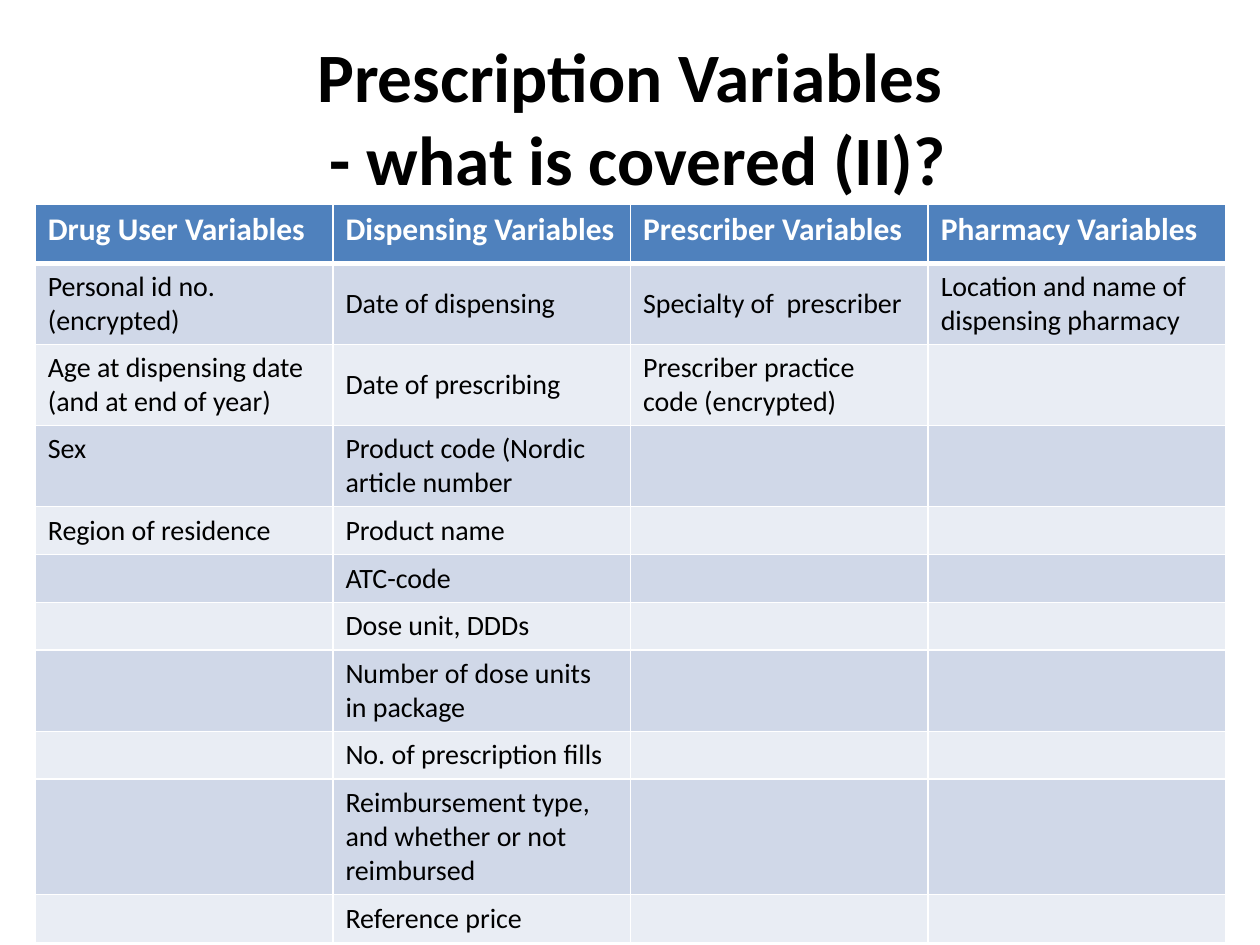
"""Build a slide with a table of prescription variables."""
from lxml.etree import SubElement
from pptx import Presentation
from pptx.dml.color import RGBColor
from pptx.enum.text import MSO_ANCHOR as Anchor, PP_ALIGN as Align
from pptx.oxml.ns import qn
from pptx.util import Inches, Pt

WHITE = RGBColor(0xFF, 0xFF, 0xFF)
BLACK = RGBColor(0, 0, 0)
BLUE = RGBColor(0x4F, 0x81, 0xBD)
BANDS = RGBColor(0xE9, 0xED, 0xF4), RGBColor(0xD0, 0xD8, 0xE8)
FONT = "Calibri"

TITLE = "Prescription Variables\v - what is covered (II)?"
HEADS = ["Drug User Variables", "Dispensing Variables",
         "Prescriber Variables", "Pharmacy Variables"]
USER = ["Personal id no. (encrypted)",
        "Age at dispensing date\n(and at end of year)",
        "Sex", "Region of residence"]
DISPENSING = ["Date of dispensing", "Date of prescribing",
              "Product code (Nordic article number", "Product name",
              "ATC-code", "Dose unit, DDDs",
              "Number of dose units in package", "No. of prescription fills",
              "Reimbursement type, and whether or not reimbursed",
              "Reference price"]
PRESCRIBER = ["Specialty of  prescriber", "Prescriber practice code (encrypted)"]
PHARMACY = ["Location and name of dispensing pharmacy"]
COLUMNS = [USER, DISPENSING, PRESCRIBER, PHARMACY]
HEIGHTS = [0.47, 0.57, 0.57, 0.57, 0.38, 0.38, 0.38, 0.57, 0.38, 0.57, 0.38]
LEFT, TOP, WIDTH = 0.28, 1.62, 9.45


def style(para, size, color, bold):
    font = para.font
    font.name, font.size, font.bold = FONT, Pt(size), bold
    font.color.rgb = color


def border(cell, row):
    props = cell._tc.get_or_add_tcPr()
    thick = {0: "lnB", 1: "lnT"}.get(row)
    for pos, side in enumerate(("lnL", "lnR", "lnT", "lnB")):
        line = SubElement(props, qn(f"a:{side}"), w=str(Pt(3 if side == thick else 1)))
        fill = SubElement(line, qn("a:solidFill"))
        SubElement(fill, qn("a:srgbClr"), val=str(WHITE))
        props.insert(pos, line)


def fill_cell(cell, text, row):
    head = row == 0
    cell.text = text
    cell.vertical_anchor = Anchor.TOP if head or text == "Sex" else Anchor.MIDDLE
    cell.fill.solid()
    cell.fill.fore_color.rgb = BLUE if head else BANDS[row % 2]
    for para in cell.text_frame.paragraphs:
        style(para, 18 if head else 16, WHITE if head else BLACK, head)
    border(cell, row)


def add_title(slide):
    title = slide.shapes.title
    title.left, title.top = Inches(0.5), Inches(0.3)
    title.width, title.height = Inches(9), Inches(1.25)
    frame = title.text_frame
    frame.text = TITLE
    frame.vertical_anchor = Anchor.MIDDLE
    para = frame.paragraphs[0]
    para.alignment = Align.CENTER
    style(para, 39.6, BLACK, True)


def add_grid(slide):
    table = slide.shapes.add_table(
        len(HEIGHTS), len(HEADS), Inches(LEFT), Inches(TOP),
        Inches(WIDTH), Inches(sum(HEIGHTS))).table
    for row, height in zip(table.rows, HEIGHTS):
        row.height = Inches(height)
    for col, (head, items) in enumerate(zip(HEADS, COLUMNS)):
        table.columns[col].width = Inches(WIDTH / len(HEADS))
        texts = [head, *items]
        for row in range(len(HEIGHTS)):
            fill_cell(table.cell(row, col), texts[row] if row < len(texts) else "", row)


def main():
    deck = Presentation()
    deck.slide_width, deck.slide_height = Inches(10), Inches(7.5)
    slide = deck.slides.add_slide(deck.slide_layouts[5])
    add_title(slide)
    add_grid(slide)
    deck.save("out.pptx")


if __name__ == "__main__":
    main()
